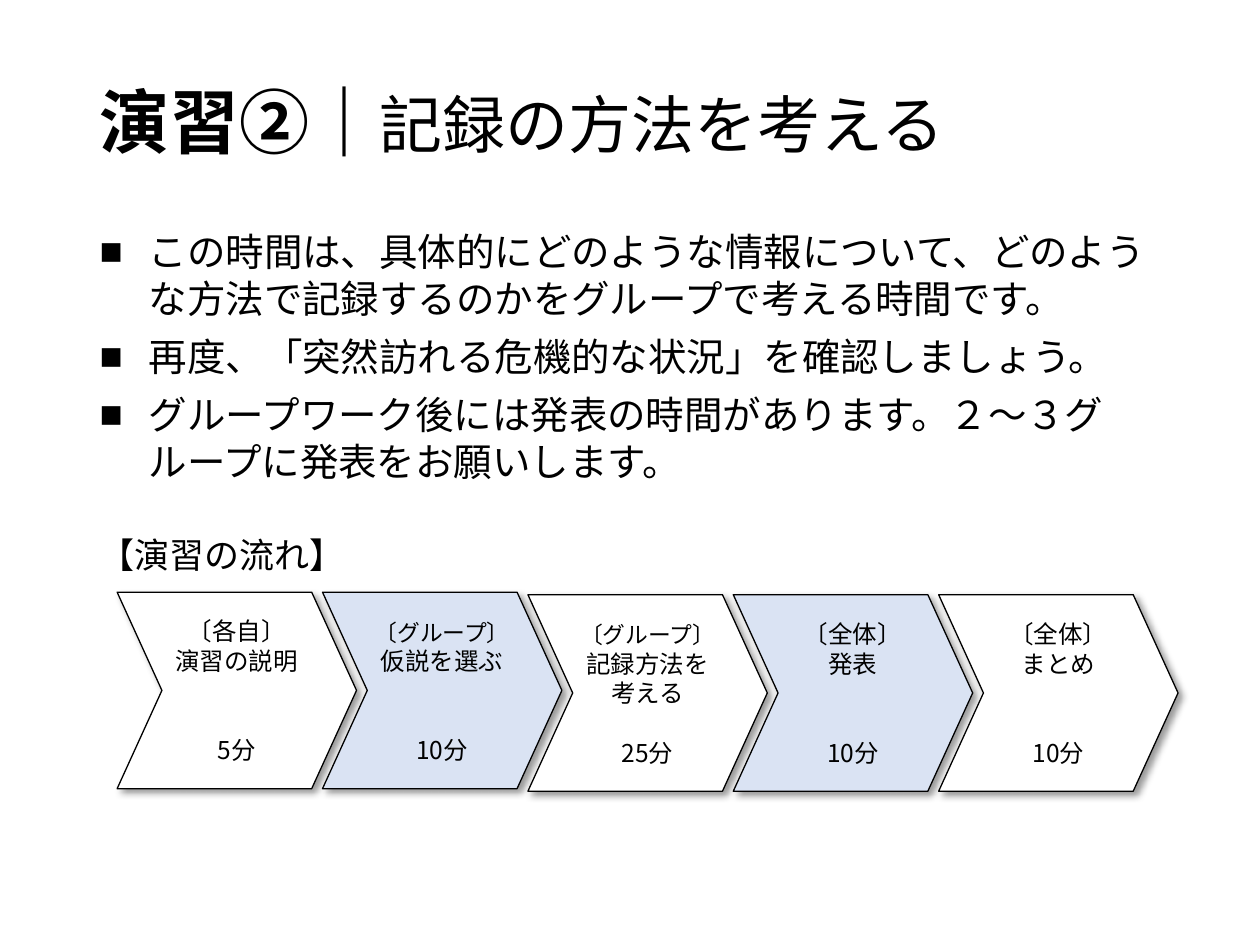
from dataclasses import dataclass

from lxml.etree import SubElement
from pptx import Presentation
from pptx.dml.color import RGBColor
from pptx.enum.shapes import MSO_SHAPE
from pptx.enum.text import MSO_ANCHOR, MSO_AUTO_SIZE, PP_ALIGN
from pptx.oxml.ns import qn
from pptx.util import Inches, Pt


@dataclass(frozen=True)
class Theme:
    face: str = "Noto Sans CJK JP"
    ink: str = "000000"
    white: str = "FFFFFF"
    blue: str = "DAE3F3"
    title: int = 40
    topic: int = 36
    body: int = 22
    label: int = 20
    step: int = 14
    group: int = 13


class Deck:
    def __init__(self, theme):
        self.theme = theme
        self.prs = Presentation()
        self.prs.slide_width, self.prs.slide_height = Inches(10), Inches(7.5)
        self.slide = self.prs.slides.add_slide(self.prs.slide_layouts[1])

    def place(self, shape, left, top, width, height):
        shape.left, shape.top = Inches(left), Inches(top)
        shape.width, shape.height = Inches(width), Inches(height)
        shape.text_frame.auto_size = MSO_AUTO_SIZE.NONE
        return shape.text_frame

    def style(self, para, size, align, gap=0, pitch=None):
        """Set the paragraph's font for Latin and Japanese, and its spacing."""
        font = para.font
        font.size, font.name = Pt(size), self.theme.face
        font.color.rgb = RGBColor.from_string(self.theme.ink)
        SubElement(font._element, qn("a:ea"), typeface=self.theme.face)
        para.alignment, para.space_before = align, Pt(gap)
        if pitch:
            para.line_spacing = Pt(pitch)

    def title(self, head, topic):
        frame = self.place(self.slide.shapes.title, 0.69, 0.4, 8.62, 1.2)
        frame.vertical_anchor = MSO_ANCHOR.MIDDLE
        para = frame.paragraphs[0]
        self.style(para, self.theme.title, PP_ALIGN.LEFT)
        para.line_spacing = 0.9
        for text, size, bold in ((head, self.theme.title, True),
                                 (topic, self.theme.topic, False)):
            run = para.add_run()
            run.text = text
            run.font.size, run.font.bold = Pt(size), bold

    def body(self, items, label):
        frame = self.place(self.slide.placeholders[1], 0.69, 1.75, 8.62, 5.31)
        frame.text = "\n".join([*items, label])
        *points, last = frame.paragraphs
        for para in points:
            self.style(para, self.theme.body, PP_ALIGN.LEFT, 6, 27)
            self.bullet(para, 0.39, "■")
        self.style(last, self.theme.label, PP_ALIGN.LEFT, 27, 25)
        self.bullet(last, 0)

    def bullet(self, para, indent, mark=None):
        props = para._p.get_or_add_pPr()
        props.set("marL", str(Inches(indent)))
        props.set("indent", str(-Inches(indent)))
        node = props.makeelement(qn("a:buChar" if mark else "a:buNone"))
        if mark:
            node.set("char", mark)
        props.find(qn("a:defRPr")).addprevious(node)

    def shade(self, shape):
        effects = SubElement(shape._element.spPr, qn("a:effectLst"))
        outer = SubElement(effects, qn("a:outerShdw"), blurRad=str(Pt(4)),
                           dist=str(Pt(3)), dir=str(45 * 60000),
                           algn="tl", rotWithShape="0")
        color = SubElement(outer, qn("a:srgbClr"), val=self.theme.ink)
        SubElement(color, qn("a:alpha"), val="40000")

    def step(self, group, left, top, fill, who, task, time, gap):
        shape = group.shapes.add_shape(MSO_SHAPE.CHEVRON, 0, 0, 0, 0)
        frame = self.place(shape, left, top, 1.9, 1.56)
        shape.adjustments[0] = 0.228
        shape.fill.solid()
        shape.fill.fore_color.rgb = RGBColor.from_string(fill)
        shape.line.color.rgb = RGBColor.from_string(self.theme.ink)
        shape.line.width = Pt(0.75)
        self.shade(shape)
        frame.word_wrap = True
        frame.vertical_anchor = MSO_ANCHOR.MIDDLE
        frame.margin_left = frame.margin_right = Inches(0.02)
        frame.text = "\n".join((who, task, time))
        first = self.theme.group if "グループ" in who else self.theme.step
        sizes = (first, self.theme.step, self.theme.step)
        for para, size, space in zip(frame.paragraphs, sizes, (0, 0, gap)):
            self.style(para, size, PP_ALIGN.CENTER, space, 17)

    def flow(self, steps):
        group = self.slide.shapes.add_group_shape()
        for i, step in enumerate(steps):
            fill = self.theme.blue if i % 2 else self.theme.white
            top = 4.7 if i < 2 else 4.72
            self.step(group, 0.93 + 1.63 * i, top, fill, *step)


def main():
    deck = Deck(Theme())
    deck.title("演習②｜", "記録の方法を考える")
    deck.body([
        "この時間は、具体的にどのような情報について、どのような方法で記録するのかをグループで考える時間です。",
        "再度、「突然訪れる危機的な状況」を確認しましょう。",
        "グループワーク後には発表の時間があります。２～３グループに発表をお願いします。",
    ], "【演習の流れ】")
    deck.flow([
        ("〔各自〕", "演習の説明", "5分", 34),
        ("〔グループ〕", "仮説を選ぶ", "10分", 34),
        ("〔グループ〕", "記録方法を考える", "25分", 17),
        ("〔全体〕", "発表", "10分", 34),
        ("〔全体〕", "まとめ", "10分", 34),
    ])
    deck.prs.save("out.pptx")


if __name__ == "__main__":
    main()
